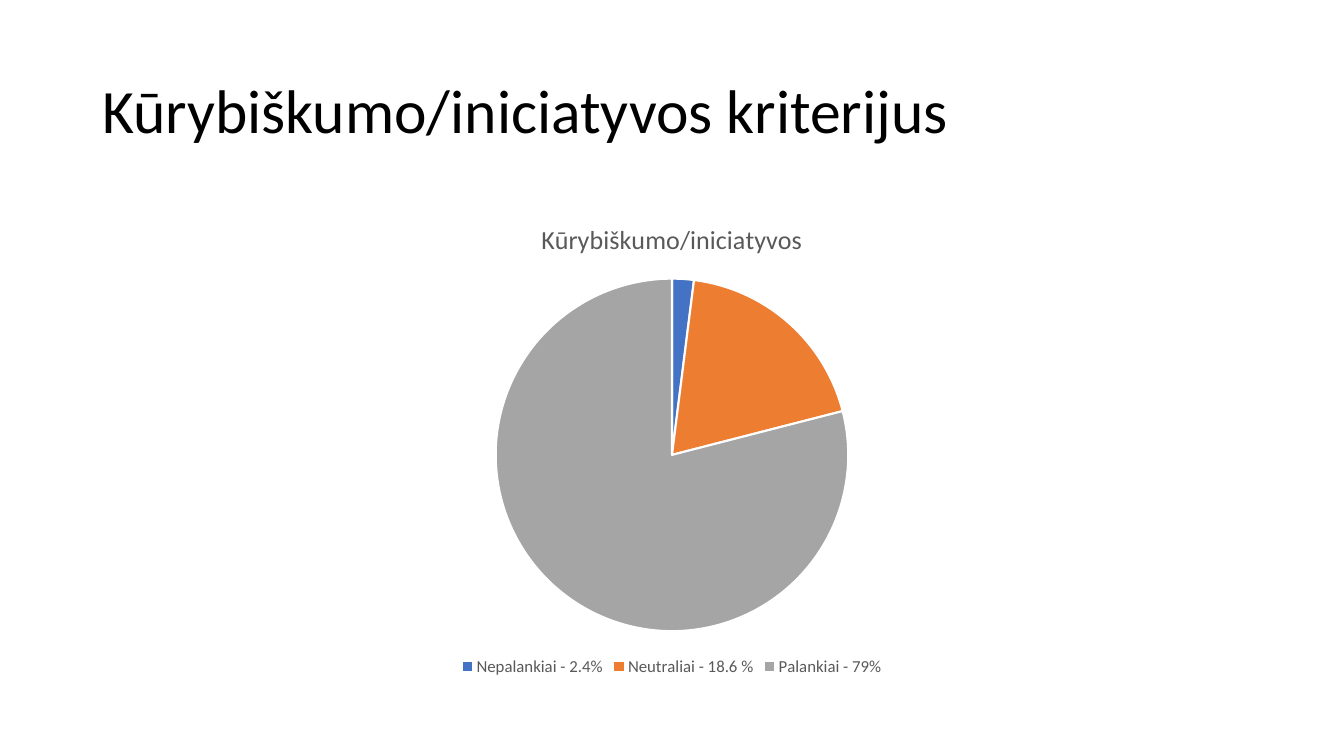
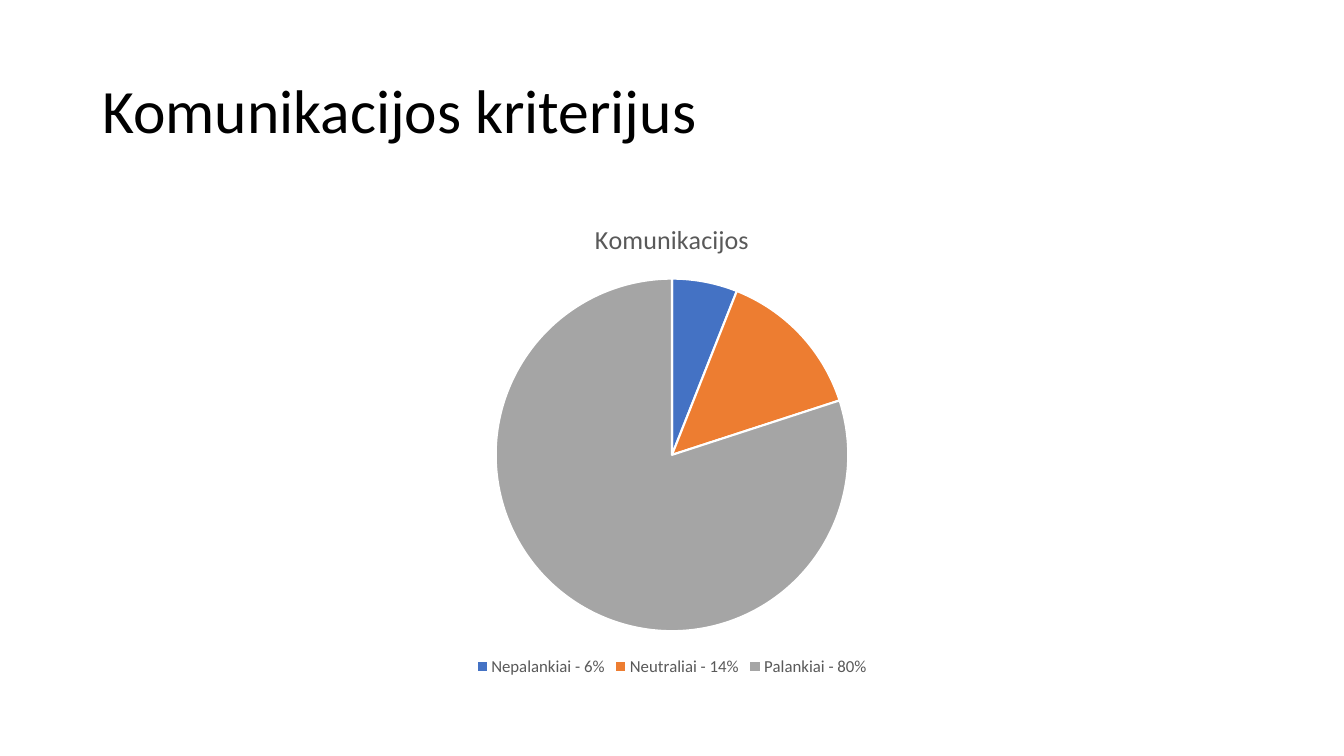
from pptx import Presentation
from pptx.chart.data import CategoryChartData
from pptx.dml.color import RGBColor
from pptx.enum.chart import XL_CHART_TYPE, XL_LEGEND_POSITION
from pptx.enum.text import MSO_ANCHOR
from pptx.util import Emu, Pt

PIE = XL_CHART_TYPE.PIE
BOTTOM = XL_LEGEND_POSITION.BOTTOM
MIDDLE = MSO_ANCHOR.MIDDLE

PX = 9525  # EMU per px, 96 px to the inch
WIDTH, HEIGHT = 1280, 720


def rgb(value):
    return RGBColor.from_string(value)


class Deck:
    """Shared style and the current slide."""

    font = "Calibri"
    black, grey, white = "000000", "595959", "FFFFFF"
    slices = ("4472C4", "ED7D31", "A5A5A5")
    left, width = 88, 1104

    def __init__(self):
        self.prs = Presentation()
        self.prs.slide_width, self.prs.slide_height = self.px(WIDTH, HEIGHT)
        self.s = None

    def px(self, *lengths):
        return [Emu(n * PX) for n in lengths]

    def style(self, font, size, color):
        font.name, font.size, font.bold = self.font, Pt(size), False
        font.color.rgb = rgb(color)

    def slide(self):
        self.s = self.prs.slides.add_slide(self.prs.slide_layouts[6])
        fill = self.s.background.fill
        fill.solid()
        fill.fore_color.rgb = rgb(self.white)

    def title(self, text):
        sp = self.s.shapes.add_textbox(*self.px(self.left, 39, self.width, 139))
        tf = sp.text_frame
        tf.word_wrap = True
        tf.vertical_anchor = MIDDLE
        p = tf.paragraphs[0]
        p.line_spacing = 0.9
        r = p.add_run()
        r.text = text
        self.style(r.font, 44, self.black)

    def pie(self, name, shares):
        data = CategoryChartData()
        data.categories = [label for label, _ in shares]
        data.add_series(name, [value for _, value in shares])
        box = self.px(self.left, 192, self.width, 456)
        chart = self.s.shapes.add_chart(PIE, *box, data).chart
        self.style(chart.font, 10, self.black)

        # Chart title
        chart.has_title = True
        chart.chart_title.include_in_layout = False
        r = chart.chart_title.text_frame.paragraphs[0].add_run()
        r.text = name
        self.style(r.font, 18.6, self.grey)

        # Legend
        chart.has_legend = True
        chart.legend.position = BOTTOM
        chart.legend.include_in_layout = False
        self.style(chart.legend.font, 12, self.grey)

        # Slices
        plot = chart.plots[0]
        plot.vary_by_categories = True
        for i, color in enumerate(self.slices):
            fmt = plot.series[0].points[i].format
            fmt.fill.solid()
            fmt.fill.fore_color.rgb = rgb(color)
            fmt.line.color.rgb = rgb(self.white)
            fmt.line.width = Pt(1.5)


# Criterion and its shares, by attitude
CRITERIA = [
    ("Kūrybiškumo/iniciatyvos", [
        ("Nepalankiai - 2.4%", 2),
        ("Neutraliai - 18.6 %", 19),
        ("Palankiai - 79%", 79),
    ]),
    ("Komunikacijos", [
        ("Nepalankiai - 6%", 6),
        ("Neutraliai - 14%", 14),
        ("Palankiai - 80%", 80),
    ]),
]


def main():
    deck = Deck()
    for name, shares in CRITERIA:
        deck.slide()
        deck.title(f"{name} kriterijus")
        deck.pie(name, shares)
    deck.prs.save("out.pptx")


if __name__ == "__main__":
    main()
